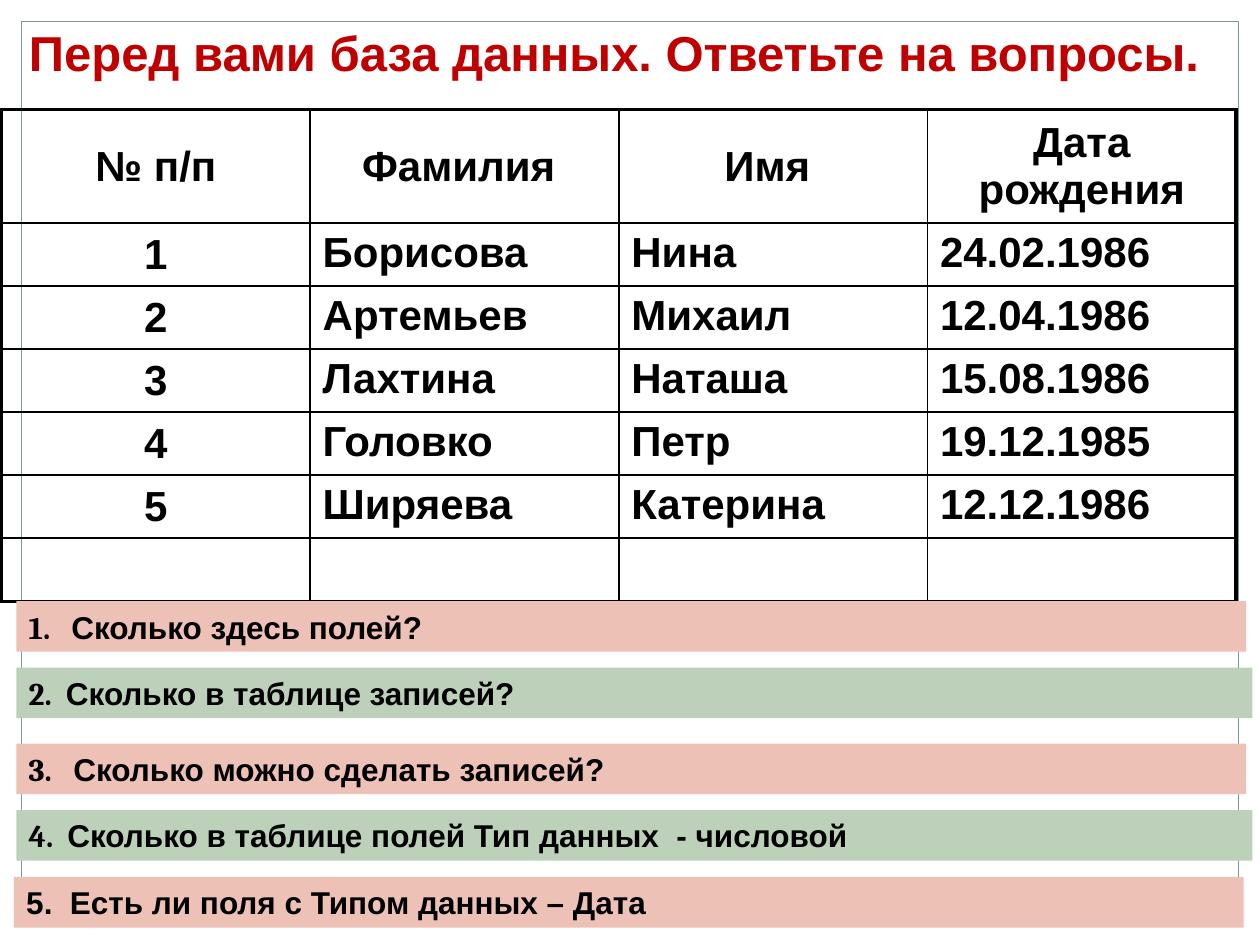
from lxml import etree
from pptx import Presentation
from pptx.dml.color import RGBColor
from pptx.enum.shapes import MSO_SHAPE
from pptx.enum.text import MSO_ANCHOR, MSO_AUTO_SIZE, PP_ALIGN
from pptx.oxml.ns import qn
from pptx.util import Cm, Pt

COLORS = {"title": "C00000", "text": "000000", "frame": "7C999A",
          "pink": "EDC1B6", "green": "BCD0BA"}
HEADERS = ["№ п/п", "Фамилия ", "Имя ", "Дата рождения"]
RECORDS = [
    ["1", "Борисова", "Нина", "24.02.1986"],
    ["2", "Артемьев", "Михаил", "12.04.1986"],
    ["3", "Лахтина", "Наташа", "15.08.1986"],
    ["4", "Головко", "Петр", "19.12.1985"],
    ["5", "Ширяева", "Катерина", "12.12.1986"],
    ["", "", "", ""],
]
QUESTIONS = [
    ("Сколько здесь полей?", "pink", "Cambria", 0.33, 12.12, 24.79, 0.86),
    ("Сколько в таблице записей?", "green", "Cambria", 0.33, 13.46, 24.92, 0.75),
    ("Сколько можно сделать записей?", "pink", "Cambria", 0.33, 14.99, 24.79, 0.9),
    ("Сколько в таблице полей Тип данных  - числовой", "green", "Cambria",
     0.33, 16.33, 24.92, 0.78),
    ("Есть ли поля с Типом данных – Дата", "pink", "Arial", 0.28, 17.68, 24.79, 0.88),
]


def rgb(name):
    """Return the named colour."""
    return RGBColor.from_string(COLORS[name])


def style(span, size, color="text", font="Arial"):
    """Format a run in bold."""
    span.font.name = font
    span.font.size = Pt(size)
    span.font.bold = True
    span.font.color.rgb = rgb(color)


def add_box(page, left, top, width, height):
    """Add a plain rectangle without shadow."""
    box = page.shapes.add_shape(MSO_SHAPE.RECTANGLE, Cm(left), Cm(top), Cm(width), Cm(height))
    box.shadow.inherit = False
    return box


def add_frame(page, left, top, width, height):
    """Draw the thin frame around the page."""
    frame = add_box(page, left, top, width, height)
    frame.fill.background()
    frame.line.color.rgb = rgb("frame")
    frame.line.width = Pt(0.75)


def place_title(page, left, top, width, height):
    """Fill and place the title."""
    title = page.shapes.title
    title.left, title.top, title.width, title.height = map(Cm, (left, top, width, height))
    title.text_frame.text = "Перед вами база данных. Ответьте на вопросы."
    title.text_frame.auto_size = MSO_AUTO_SIZE.NONE
    title.text_frame.vertical_anchor = MSO_ANCHOR.TOP
    para = title.text_frame.paragraphs[0]
    para.alignment = PP_ALIGN.LEFT
    style(para.runs[0], 28, "title")


def set_borders(cell, outer_sides):
    """Draw cell borders, thicker on the outer sides."""
    properties = cell._tc.get_or_add_tcPr()
    for index, side in enumerate(("lnL", "lnR", "lnT", "lnB")):
        width = Pt(2.25) if side in outer_sides else Pt(1)
        line = etree.Element(qn("a:" + side), w=str(int(width)))
        fill = etree.SubElement(line, qn("a:solidFill"))
        etree.SubElement(fill, qn("a:srgbClr"), val=COLORS["text"])
        properties.insert(index, line)


def add_records(page, left, top, width, header_height, row_height):
    """Add the table of people."""
    rows = [HEADERS] + RECORDS
    last_row, last_column = len(rows) - 1, len(HEADERS) - 1
    height = header_height + row_height * last_row
    table = page.shapes.add_table(len(rows), len(HEADERS), Cm(left), Cm(top),
                                  Cm(width), Cm(height)).table
    table.first_row = table.horz_banding = False
    for column in table.columns:
        column.width = Cm(width / len(HEADERS))
    for r, values in enumerate(rows):
        table.rows[r].height = Cm(row_height if r else header_height)
        for c, value in enumerate(values):
            cell = table.cell(r, c)
            cell.fill.background()
            outer = {"lnL": c == 0, "lnR": c == last_column, "lnT": r == 0, "lnB": r == last_row}
            set_borders(cell, [side for side, is_outer in outer.items() if is_outer])
            cell.text_frame.text = value
            para = cell.text_frame.paragraphs[0]
            if r == 0 or c == 0:
                cell.vertical_anchor = MSO_ANCHOR.MIDDLE
                para.alignment = PP_ALIGN.CENTER
            for span in para.runs:
                style(span, 24)


def add_question(page, number, text, color, number_font, left, top, width, tab):
    """Add a coloured bar with a numbered question."""
    bar = add_box(page, left, top, width, 1.02)
    bar.fill.solid()
    bar.fill.fore_color.rgb = rgb(color)
    bar.line.fill.background()
    bar.text_frame.word_wrap = True
    para = bar.text_frame.paragraphs[0]
    para.alignment = PP_ALIGN.LEFT
    tabs = etree.SubElement(para._p.get_or_add_pPr(), qn("a:tabLst"))
    etree.SubElement(tabs, qn("a:tab"), pos=str(int(Cm(tab))), algn="l")
    for words, font in ((f"{number}.\t", number_font), (text, "Arial")):
        span = para.add_run()
        span.text = words
        style(span, 18, font=font)


def main():
    """Build and save the slide."""
    deck = Presentation()
    deck.slide_width, deck.slide_height = Cm(25.4), Cm(19.05)
    page = deck.slides.add_slide(deck.slide_layouts[5])
    add_frame(page, 0.43, 0.43, 24.54, 18.19)
    place_title(page, 0.33, 0.33, 24.79, 1.45)
    add_records(page, 0.03, 2.21, 24.89, 2.29, 1.27)
    for number, question in enumerate(QUESTIONS, 1):
        add_question(page, number, *question)
    deck.save("out.pptx")


if __name__ == "__main__":
    main()
